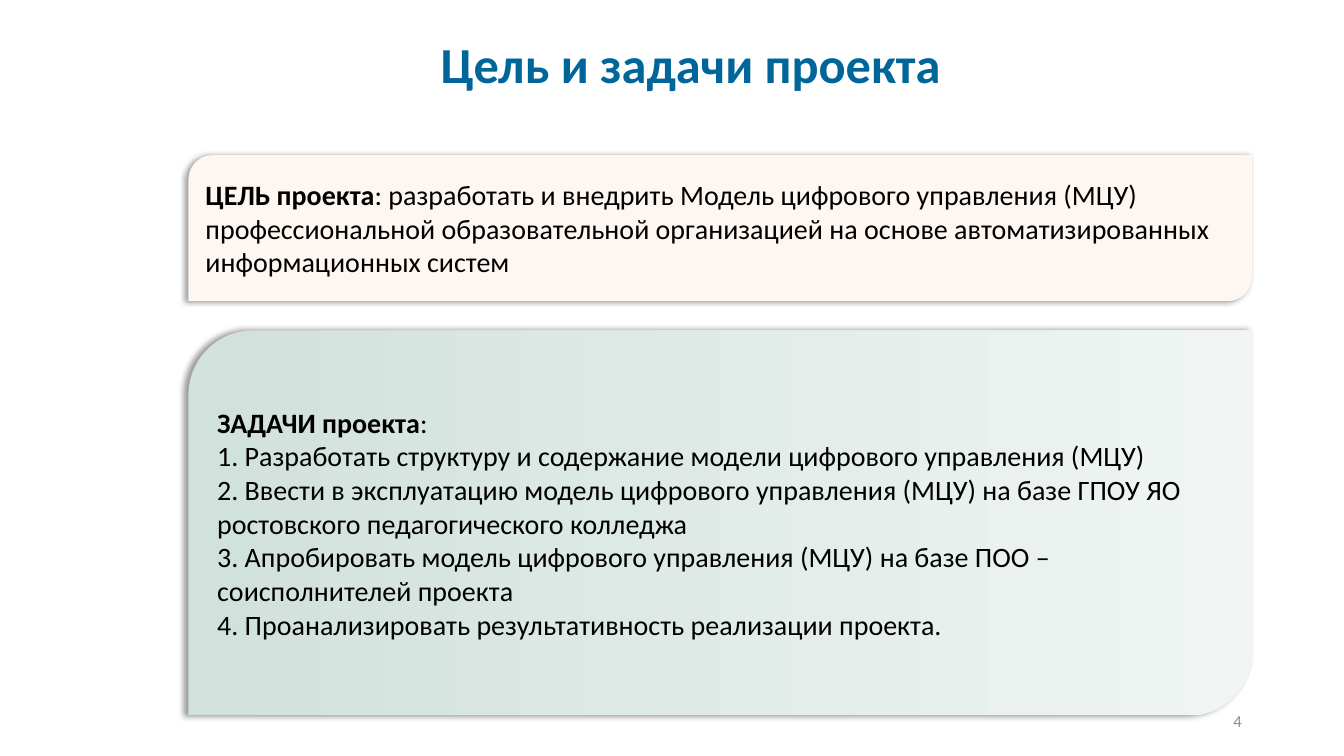
from lxml.etree import SubElement
from pptx import Presentation
from pptx.dml.color import RGBColor
from pptx.enum.shapes import MSO_SHAPE as Preset
from pptx.enum.text import MSO_ANCHOR as Anchor, PP_ALIGN as Align
from pptx.oxml.ns import qn
from pptx.util import Cm, Pt

BLUE = RGBColor(0x00, 0x66, 0x99)
GREY = RGBColor(0x8C, 0x8C, 0x8C)
BLACK = RGBColor(0x00, 0x00, 0x00)
CREAM = RGBColor(0xFE, 0xF6, 0xF0)
SAGE = RGBColor(0xD1, 0xE1, 0xDB)
PALE_SAGE = RGBColor(0xF0, 0xF5, 0xF3)

GOAL = ("ЦЕЛЬ проекта", ": разработать и внедрить Модель цифрового управления (МЦУ) "
        "профессиональной образовательной организацией на основе "
        "автоматизированных информационных систем")
TASKS_HEAD = ("ЗАДАЧИ проекта", ":")
TASKS = [
    "1. Разработать структуру и содержание модели цифрового управления (МЦУ)",
    "2. Ввести в эксплуатацию модель цифрового управления (МЦУ) на базе ГПОУ ЯО "
    "ростовского педагогического колледжа",
    "3. Апробировать модель цифрового управления (МЦУ) на базе ПОО – "
    "соисполнителей проекта",
    "4. Проанализировать результативность реализации проекта.",
]


def set_font(paragraph, size, color, bold=None):
    """Set the typeface, size, colour and weight of a paragraph."""
    font = paragraph.font
    font.name, font.size, font.bold = "Calibri", Pt(size), bold
    font.color.rgb = color


def add_label(slide, box, text, size, color, align, bold=None):
    """Place one line of text, centred vertically in its box."""
    frame = slide.shapes.add_textbox(*map(Cm, box)).text_frame
    frame.word_wrap = True
    frame.vertical_anchor = Anchor.MIDDLE
    line = frame.paragraphs[0]
    line.text, line.alignment = text, align
    set_font(line, size, color, bold)
    return line


def add_left_shadow(panel):
    """Cast a soft shadow to the left of a panel."""
    panel.shadow.inherit = False
    effects = panel._element.spPr.find(qn("a:effectLst"))
    shadow = SubElement(effects, qn("a:outerShdw"), blurRad=str(Pt(4)),
                        dist=str(Pt(3)), dir="10800000", algn="r", rotWithShape="0")
    black = SubElement(shadow, qn("a:srgbClr"), val=str(BLACK))
    SubElement(black, qn("a:alpha"), val="40000")


def add_panel(slide, box, colors, heading, items=()):
    """Place a shadowed panel with a bold lead-in and its items."""
    panel = slide.shapes.add_shape(Preset.ROUND_2_DIAG_RECTANGLE, *map(Cm, box))
    if len(colors) == 1:
        panel.fill.solid()
        panel.fill.fore_color.rgb = colors[0]
    else:
        panel.fill.gradient()
        panel.fill.gradient_angle = 0
        for stop, color in zip(panel.fill.gradient_stops, colors):
            stop.color.rgb = color
    panel.line.fill.background()
    add_left_shadow(panel)

    frame = panel.text_frame
    frame.word_wrap = True
    frame.vertical_anchor = Anchor.MIDDLE
    lead, rest = heading
    opening = frame.paragraphs[0]
    lead_run = opening.add_run()
    lead_run.text, lead_run.font.bold = lead, True
    opening.add_run().text = rest
    for item in items:
        frame.add_paragraph().text = item
    for paragraph in frame.paragraphs:
        paragraph.alignment = Align.LEFT
        set_font(paragraph, 20, BLACK)


def build_goal_slide(deck):
    """Build the slide with the project goal and tasks."""
    slide = deck.slides.add_slide(deck.slide_layouts[6])
    title = add_label(slide, (5.66, 0.84, 23.5, 1.7), "Цель и задачи проекта",
                      36, BLUE, Align.CENTER, True)
    title.line_spacing = 0.9
    add_label(slide, (23.93, 17.65, 7.62, 1.02), "4", 12, GREY, Align.RIGHT)
    add_panel(slide, (4.75, 3.91, 26.8, 3.68), [CREAM], GOAL)
    add_panel(slide, (4.75, 8.33, 26.82, 9.7), [SAGE, PALE_SAGE], TASKS_HEAD, TASKS)


def main():
    """Create the deck and save it."""
    deck = Presentation()
    deck.slide_width, deck.slide_height = Cm(33.87), Cm(19.05)
    build_goal_slide(deck)
    deck.save("out.pptx")


if __name__ == "__main__":
    main()
